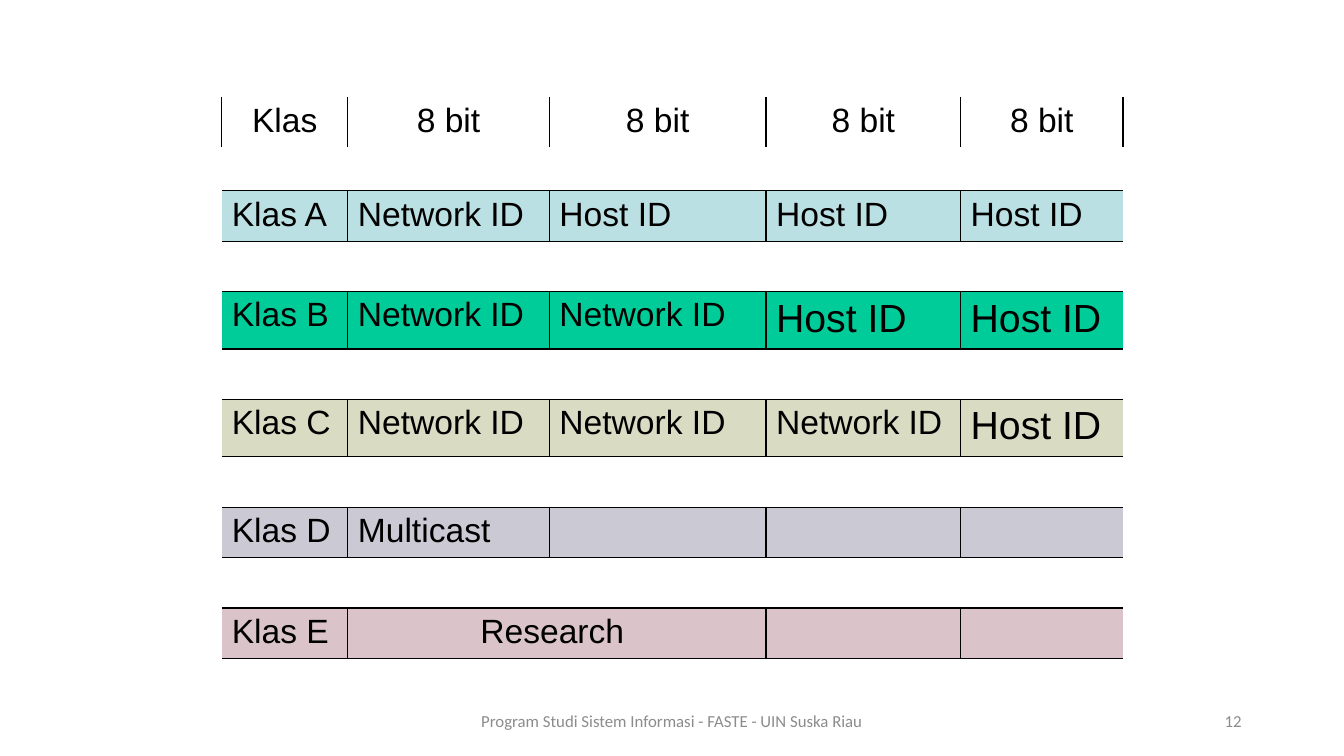
from pptx import Presentation, util as u
from pptx.dml.color import RGBColor
from pptx.enum import text as t
from pptx.oxml import parse_xml
from pptx.oxml.ns import nsdecls

BLACK = RGBColor(0x00, 0x00, 0x00)
GREY = RGBColor(0x8C, 0x8C, 0x8C)
AQUA = RGBColor(0xBB, 0xE0, 0xE3)
GREEN = RGBColor(0x00, 0xCC, 0x99)
OLIVE = RGBColor(0xD9, 0xDB, 0xC3)
LILAC = RGBColor(0xCB, 0xCA, 0xD4)
ROSE = RGBColor(0xDA, 0xC4, 0xCA)

LEFT, MID, RIGHT = t.PP_ALIGN.LEFT, t.PP_ALIGN.CENTER, t.PP_ALIGN.RIGHT
NET, HOST = "Network ID", "Host ID"
COLS = [90, 144, 154.8, 139, 116]
HEAD = ["Klas"] + ["8 bit"] * 4

# Each class: fill, row height, texts, columns in large type
ROWS = [
    (AQUA, 36, ["Klas A", NET, HOST, HOST, HOST], ()),
    (GREEN, 41, ["Klas B", NET, NET, HOST, HOST], (3, 4)),
    (OLIVE, 41, ["Klas C", NET, NET, NET, HOST], (4,)),
    (LILAC, 36, ["Klas D", "Multicast", "", "", ""], ()),
    (ROSE, 36, ["Klas E", "Research ", "", "", ""], ()),
]


class Deck:
    """Holds the text style and the current slide."""

    def __init__(self, wide, high):
        self.prs = Presentation()
        self.prs.slide_width, self.prs.slide_height = u.Pt(wide), u.Pt(high)
        self.slide = self.prs.slides.add_slide(self.prs.slide_layouts[6])
        self.font, self.size = "Arial", 24

    def style(self, para, size, align, color=BLACK, font=None):
        para.alignment = align
        for run in para.runs:
            run.font.name = font or self.font
            run.font.size = u.Pt(size)
            run.font.color.rgb = color

    def label(self, x, y, w, h, words, align):
        frame = self.slide.shapes.add_textbox(
            u.Pt(x), u.Pt(y), u.Pt(w), u.Pt(h)).text_frame
        frame.word_wrap = True
        frame.vertical_anchor = t.MSO_ANCHOR.MIDDLE
        frame.text = words
        self.style(frame.paragraphs[0], 12, align, GREY, "Calibri")

    def table(self, x, y, cols, rows):
        frame = self.slide.shapes.add_table(
            len(rows), len(cols), u.Pt(x), u.Pt(y),
            u.Pt(sum(cols)), u.Pt(sum(rows)))
        grid = frame.table
        grid.first_row = grid.horz_banding = False
        for col, wide in zip(grid.columns, cols):
            col.width = u.Pt(wide)
        for row, high in zip(grid.rows, rows):
            row.height = u.Pt(high)
        return grid

    def cell(self, cell, words, edges, fill=None, size=None, align=LEFT):
        for side in "LRTB":
            paint = ('<a:solidFill><a:srgbClr val="000000"/></a:solidFill>'
                     if side in edges else "<a:noFill/>")
            cell._tc.get_or_add_tcPr().append(parse_xml(
                f'<a:ln{side} {nsdecls("a")} w="12700">{paint}</a:ln{side}>'))
        if fill is None:
            cell.fill.background()
        else:
            cell.fill.solid()
            cell.fill.fore_color.rgb = fill
        if words:
            cell.text = words
            self.style(cell.text_frame.paragraphs[0], size or self.size, align)


def main():
    deck = Deck(960, 540)

    # Footer and page number
    deck.label(318, 500.5, 324, 28.8,
               "Program Studi Sistem Informasi - FASTE - UIN Suska Riau", MID)
    deck.label(678, 500.5, 216, 28.8, "12", RIGHT)

    # Grid: a heading, then a spacer before each class
    highs = [36]
    for n, row in enumerate(ROWS):
        highs += [36 if n else 31, row[1]]
    grid = deck.table(158.4, 69.2, COLS, highs)
    last = len(COLS) - 1

    # Heading
    for c, words in enumerate(HEAD):
        deck.cell(grid.cell(0, c), words, "LR", align=MID)

    # Spacers and classes
    for n, (fill, _, texts, large) in enumerate(ROWS):
        gap = 2 * n + 1
        for c, words in enumerate(texts):
            deck.cell(grid.cell(gap, c), "", "TB" if n else "B")
            edges = "TB" + ("L" if c else "") + ("R" if c < last else "")
            deck.cell(grid.cell(gap + 1, c), words, edges, fill,
                      28 if c in large else None,
                      MID if words.startswith("Research") else LEFT)
        grid.cell(gap, 0).merge(grid.cell(gap, last))

    # Research spans two columns
    end = len(highs) - 1
    grid.cell(end, 1).merge(grid.cell(end, 2))

    deck.prs.save("out.pptx")


if __name__ == "__main__":
    main()
